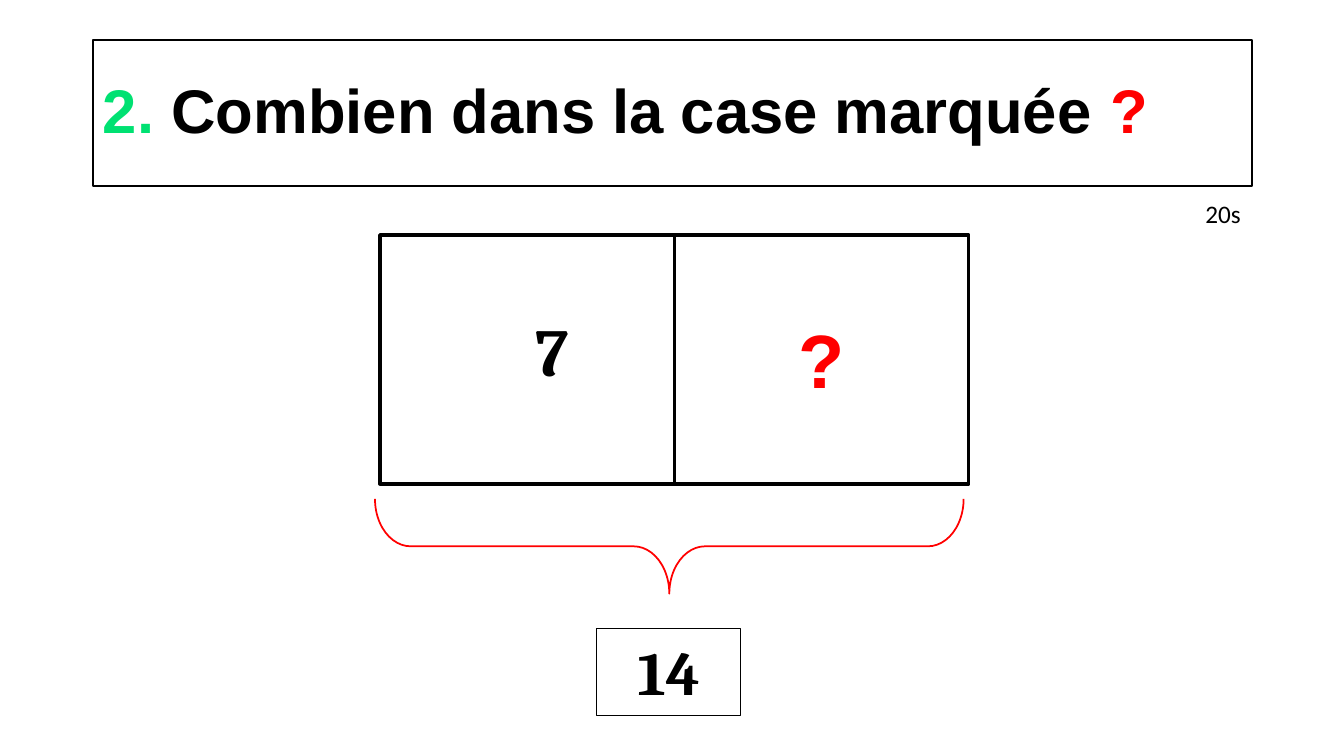
import pptx
import pptx.util
import pptx.dml.color
import pptx.enum.shapes
import pptx.enum.text

Pt = pptx.util.Pt
SHAPE = pptx.enum.shapes.MSO_SHAPE
ALIGN = pptx.enum.text.PP_ALIGN
ANCHOR = pptx.enum.text.MSO_ANCHOR
FIT = pptx.enum.text.MSO_AUTO_SIZE

BLACK, RED, GREEN = "000000", "FF0000", "00E172"


def paint(target, color):
    """Give a font or line a solid colour."""
    if hasattr(target, "fill"):
        target.fill.solid()
        target = target.fill.fore_color
    target.rgb = pptx.dml.color.RGBColor.from_string(color)


def style(run, font, size, color, bold=True):
    run.font.name = font
    run.font.size = Pt(size)
    run.font.bold = bold
    paint(run.font, color)


def write(shape, text, font, size, color, align=ALIGN.CENTER, bold=True,
          wrap=True):
    frame = shape.text_frame
    frame.text = text
    frame.word_wrap = wrap
    frame.auto_size = FIT.SHAPE_TO_FIT_TEXT
    frame.vertical_anchor = ANCHOR.TOP
    frame.paragraphs[0].alignment = align
    style(frame.paragraphs[0].runs[0], font, size, color, bold)


def outline(shapes, kind, box, color, width):
    shape = shapes.add_shape(kind, *map(Pt, box))
    shape.shadow.inherit = False
    shape.fill.background()
    paint(shape.line, color)
    shape.line.width = Pt(width)
    return shape


def label(shapes, box, *args, **kwargs):
    write(shapes.add_textbox(*map(Pt, box)), *args, **kwargs)


def heading(title):
    title.left, title.top, title.width, title.height = map(
        Pt, (66.24, 28.8, 828, 104.4))
    paint(title.line, BLACK)
    title.line.width = Pt(1.5)
    title.text_frame.vertical_anchor = ANCHOR.MIDDLE
    para = title.text_frame.paragraphs[0]
    para.alignment = ALIGN.LEFT
    para.line_spacing = 0.9
    for text, color in (("2. ", GREEN),
                        ("Combien dans la case marquée ", BLACK),
                        ("?", RED)):
        run = para.add_run()
        run.text = text
        style(run, "Arial", 44, color)


def main():
    deck = pptx.Presentation()
    deck.slide_width, deck.slide_height = Pt(960), Pt(540)
    slide = deck.slides.add_slide(deck.slide_layouts[5])
    heading(slide.shapes.title)

    # Bar model: two equal cells
    model = slide.shapes.add_group_shape().shapes
    side = 210.3
    for col in range(2):
        outline(model, SHAPE.RECTANGLE,
                (271.4 + col * side, 167.8, side, 177.8), BLACK, 2.5)
    label(model, (342.7, 217.4, 103, 65.5), "7", "Cambria", 48, BLACK)

    # Brace under the cells, with the total
    brace = outline(model, SHAPE.RIGHT_BRACE, (444.2, 180, 67.7, 420.5),
                    RED, 1.25)
    brace.rotation = 90
    brace.adjustments[0] = 0.377
    brace.adjustments[1] = 0.5
    total = outline(model, SHAPE.RECTANGLE, (426.2, 449.3, 103, 61.9),
                    BLACK, 0.75)
    write(total, "14", "Cambria", 44, BLACK)
    label(model, (530.6, 220.3, 112.3, 72.7), "?", "Arial", 54, RED)

    # Time limit
    label(slide.shapes, (853.9, 138.2, 40.3, 28.8), "20s", "Calibri", 18,
          BLACK, align=ALIGN.LEFT, bold=False, wrap=False)

    deck.save("out.pptx")


if __name__ == "__main__":
    main()
